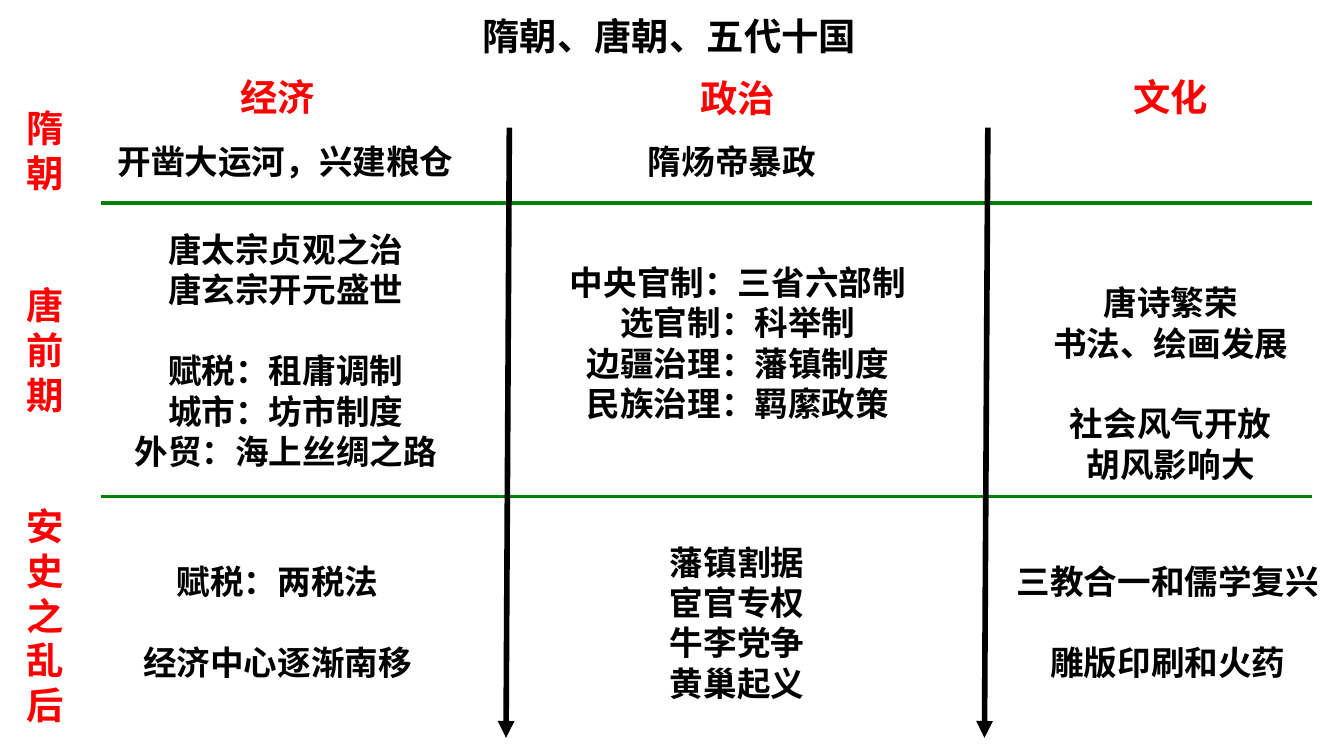
import pptx
import pptx.util
import pptx.dml.color
import pptx.enum.shapes
import pptx.enum.text
import pptx.oxml.ns
import lxml.etree

PX = 4572  # EMU per px, 200 px to the inch
BLACK, RED, GREEN = "000000", "FF0000", "008000"
ALIGN = pptx.enum.text.PP_ALIGN
HEAD = dict(size=20, font="Noto Sans CJK SC", align=ALIGN.LEFT)

prs = pptx.Presentation()
prs.slide_width, prs.slide_height = 2000 * PX, 1125 * PX
s = prs.slides.add_slide(prs.slide_layouts[6])


def text(content, x, y, w, h, size=18, font="Calibri", color=BLACK,
         align=ALIGN.CENTER, wrap=False):
    """Add a bold text box; a blank line in content becomes space before."""
    tf = s.shapes.add_textbox(x * PX, y * PX, w * PX, h * PX).text_frame
    tf.word_wrap = wrap
    tf.auto_size = pptx.enum.text.MSO_AUTO_SIZE.SHAPE_TO_FIT_TEXT
    p = tf.paragraphs[0]
    for i, block in enumerate(content.split("\n\n")):
        for j, row in enumerate(block.split("\n")):
            if i or j:
                p = tf.add_paragraph()
            if i and not j:
                p.space_before = pptx.util.Pt(size * 1.21)
            p.alignment = align
            r = p.add_run()
            r.text = row
            r.font.size = pptx.util.Pt(size)
            r.font.name = font
            r.font.bold = True
            r.font.color.rgb = pptx.dml.color.RGBColor.from_string(color)


def line(x1, y1, x2, y2, color, width, arrow=False):
    c = s.shapes.add_connector(pptx.enum.shapes.MSO_CONNECTOR.STRAIGHT,
                               x1 * PX, y1 * PX, x2 * PX, y2 * PX)
    c.line.color.rgb = pptx.dml.color.RGBColor.from_string(color)
    c.line.width = pptx.util.Pt(width)
    if arrow:
        lxml.etree.SubElement(c.line._get_or_add_ln(),
                              pptx.oxml.ns.qn("a:tailEnd"), type="triangle")
    lxml.etree.SubElement(c._element.spPr, pptx.oxml.ns.qn("a:effectLst"))


text("隋朝、唐朝、五代十国", 698, 10, 602, 88, **HEAD)

for y in (739, 302):
    line(150, y, 1952, y, GREEN, 2)

# Periods, one character to a line
for label, y, w, h in [("唐前期", 410, 98, 222),
                       ("安史之乱后", 739, 98, 356),
                       ("隋朝", 147, 102, 154)]:
    text(label, 20, y, w, h, color=RED, wrap=True, **HEAD)

# Topics
for label, x, y in [("政治", 1023, 102), ("经济", 338, 100), ("文化", 1667, 100)]:
    text(label, x, y, 152, 88, color=RED, **HEAD)

for x in (1470, 758):
    line(x, 190, x - 5, 1098, BLACK, 3, arrow=True)

# Facts for each period and topic
for content, x, y, w, h in [
    ("开凿大运河，兴建粮仓", 151, 200, 548, 80),
    ("隋炀帝暴政", 941, 200, 296, 80),
    ("中央官制：三省六部制\n选官制：科举制\n边疆治理：藩镇制度\n民族治理：羁縻政策",
     825, 380, 546, 262),
    ("唐诗繁荣\n书法、绘画发展\n\n社会风气开放\n胡风影响大", 1545, 410, 394, 324),
    ("唐太宗贞观之治\n唐玄宗开元盛世\n\n赋税：租庸调制\n城市：坊市制度\n外贸：海上丝绸之路",
     176, 331, 498, 384),
    ("藩镇割据\n宦官专权\n牛李党争\n黄巢起义", 974, 796, 246, 262),
    ("三教合一和儒学复兴\n\n雕版印刷和火药", 1491, 825, 494, 202),
    ("赋税：两税法\n\n经济中心逐渐南移", 191, 825, 444, 202),
]:
    text(content, x, y, w, h)

prs.save("out.pptx")
